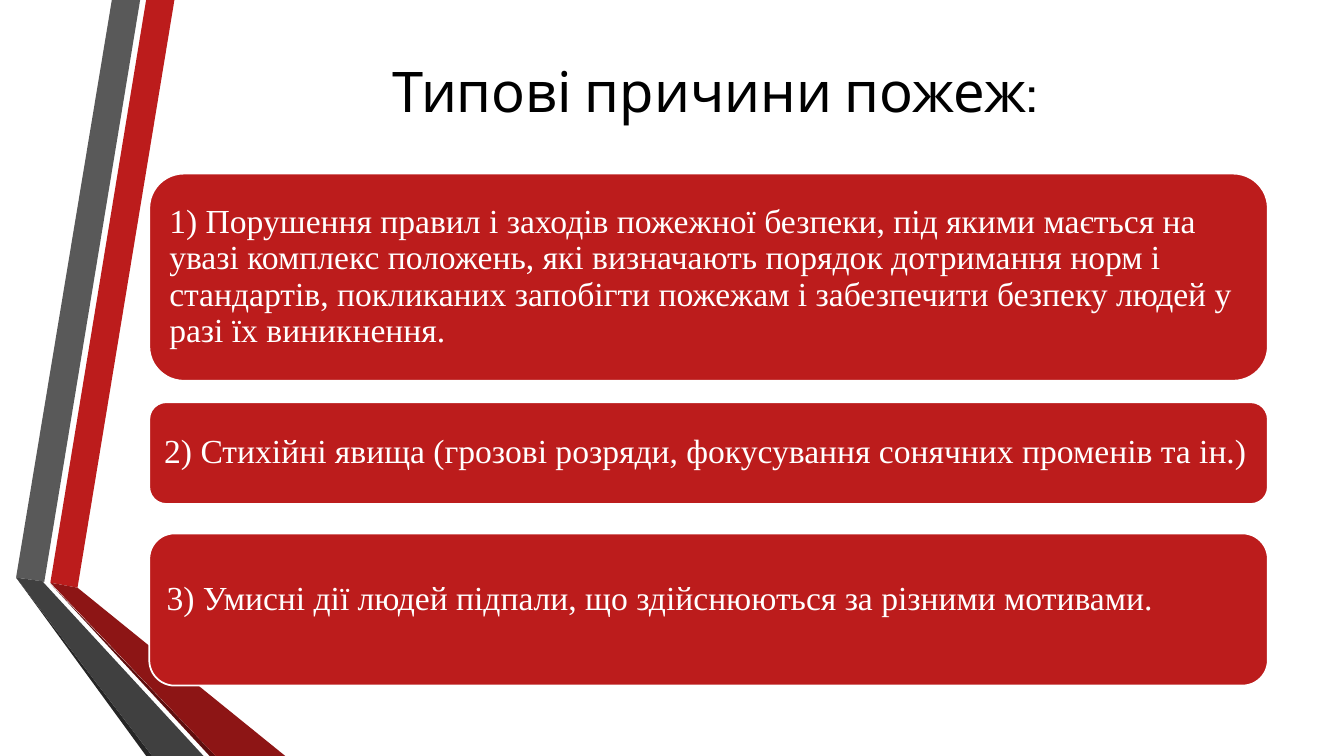
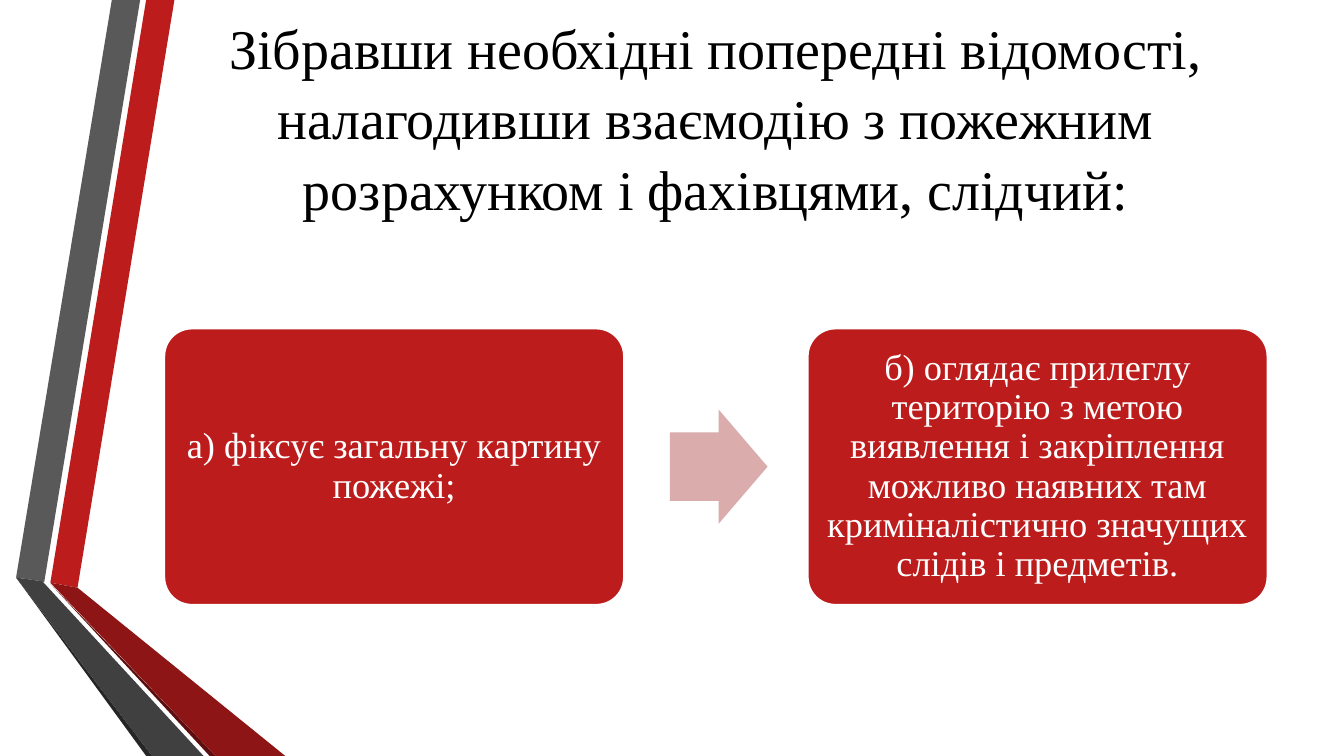
"""Build two slides on the causes of fires and the investigator's first steps."""
import dataclasses

import pptx
import pptx.dml.color
import pptx.enum.shapes
import pptx.enum.text
import pptx.util

Pt = pptx.util.Pt
SHAPES = pptx.enum.shapes.MSO_SHAPE
ALIGN = pptx.enum.text.PP_ALIGN


@dataclasses.dataclass(frozen=True)
class Theme:
    """Colours, fonts and sizes in points."""
    red: str = "BC1C1C"
    deep_red: str = "8D1515"
    darkest_red: str = "5E0E0E"
    pale_red: str = "DAACAC"
    grey: str = "595959"
    dark_grey: str = "404040"
    darkest_grey: str = "262626"
    title_ink: str = "000000"
    card_ink: str = "FFFFFF"
    serif: str = "Times New Roman"
    sans: str = "Cabin"
    title_size: float = 40
    cause_size: float = 24
    step_size: float = 26
    outline: float = 1.25


THEME = Theme()
SLIDE_SIZE = (960, 540)
TITLE_LEFT, TITLE_WIDTH = 116.6, 789

RIBBONS = [
    (THEME.red, [(36, 416.2), (55.4, 419.8), (124.6, 0), (104.4, 0)]),
    (THEME.grey, [(100.1, 0), (79.9, 0), (11.5, 412.6), (31.7, 415.4)]),
    (THEME.darkest_grey, [(11.5, 412.6), (104.4, 540), (108.7, 540)]),
    (THEME.darkest_red, [(36, 416.9), (149.8, 540), (154.1, 540)]),
    (THEME.deep_red, [(36, 416.2), (154.1, 540), (203.8, 540), (55.4, 419.8)]),
    (THEME.dark_grey, [(145.4, 540), (31, 416), (31.7, 415.4), (11.5, 412.6), (108.7, 540)]),
]

CAUSES_TITLE = "Типові причини пожеж:"
CAUSES = [
    ("1) Порушення правил і заходів пожежної безпеки, під якими мається на увазі "
     "комплекс положень, які визначають порядок дотримання норм і стандартів, "
     "покликаних запобігти пожежам і забезпечити безпеку людей у разі їх виникнення.",
     124, 148, 0),
    ("2) Стихійні явища (грозові розряди, фокусування сонячних променів та ін.)",
     287.3, 72.7, 0),
    ("3) Умисні дії людей підпали, що здійснюються за різними мотивами.",
     381, 108.7, 14),
]
CAUSE_LEFT, CAUSE_WIDTH, CAUSE_INSET = 106.6, 799, 7.2

STEPS_TITLE = ("Зібравши необхідні попередні відомості, налагодивши взаємодію "
               "з пожежним розрахунком і фахівцями, слідчий:")
STEPS = [
    "а) фіксує загальну картину пожежі;",
    "б) оглядає прилеглу територію з метою виявлення і закріплення можливо наявних "
    "там криміналістично значущих слідів і предметів.",
]
STEP_LEFT, STEP_TOP, STEP_WIDTH, STEP_HEIGHT = 117.4, 234.7, 328.3, 197.3
STEP_PITCH, STEP_INSET = 1.4 * STEP_WIDTH, 8
ARROW_WIDTH, ARROW_HEIGHT = 69.8, 81.4


def paint(shape, colour, outline=None):
    """Fill a shape flat, with an outline only if one is given."""
    shape.shadow.inherit = False
    shape.fill.solid()
    shape.fill.fore_color.rgb = pptx.dml.color.RGBColor.from_string(colour)
    if outline:
        shape.line.color.rgb = pptx.dml.color.RGBColor.from_string(outline)
        shape.line.width = Pt(THEME.outline)
    else:
        shape.line.fill.background()


def write(frame, text, font, size, colour, align, spacing):
    """Write one paragraph, vertically centred and wrapped."""
    frame.word_wrap = True
    frame.auto_size = pptx.enum.text.MSO_AUTO_SIZE.NONE
    frame.vertical_anchor = pptx.enum.text.MSO_ANCHOR.MIDDLE
    paragraph = frame.paragraphs[0]
    paragraph.alignment = align
    paragraph.line_spacing = spacing
    run = paragraph.add_run()
    run.text = text
    run.font.name = font
    run.font.size = Pt(size)
    run.font.color.rgb = pptx.dml.color.RGBColor.from_string(colour)


def add_titled_slide(deck, text, font, top, height):
    """Add a title-only slide with its title placed."""
    slide = deck.slides.add_slide(deck.slide_layouts[5])
    title = slide.shapes.title
    title.left, title.top = Pt(TITLE_LEFT), Pt(top)
    title.width, title.height = Pt(TITLE_WIDTH), Pt(height)
    write(title.text_frame, text, font, THEME.title_size, THEME.title_ink, ALIGN.CENTER, 1.05)
    return slide


def add_card(slide, text, box, size, align, inset, lift=0):
    """Add a red rounded card; lift is extra space below its text."""
    card = slide.shapes.add_shape(SHAPES.ROUNDED_RECTANGLE, *map(Pt, box))
    paint(card, THEME.red, THEME.card_ink)
    frame = card.text_frame
    frame.margin_left = frame.margin_right = frame.margin_top = Pt(inset)
    frame.margin_bottom = Pt(inset + lift)
    write(frame, text, THEME.serif, size, THEME.card_ink, align, 0.9)
    return card


def add_ribbons(deck, slide):
    """Draw the folded ribbons and move them to the slide master."""
    tree = deck.slide_master.shapes.element
    for order, (colour, corners) in enumerate(RIBBONS):
        start, *rest = [(Pt(x), Pt(y)) for x, y in corners]
        outline = slide.shapes.build_freeform(*start)
        outline.add_line_segments(rest, close=True)
        ribbon = outline.convert_to_shape()
        paint(ribbon, colour)
        ribbon.element.xpath(".//p:cNvPr")[0].set("id", str(100 + order))
        tree.insert(2 + order, ribbon.element)


def add_causes(deck):
    """Add the slide that lists the causes."""
    slide = add_titled_slide(deck, CAUSES_TITLE, THEME.sans, 24.5, 77.8)
    for text, top, height, lift in CAUSES:
        add_card(slide, text, (CAUSE_LEFT, top, CAUSE_WIDTH, height),
                 THEME.cause_size, ALIGN.LEFT, CAUSE_INSET, lift)
    return slide


def add_steps(deck):
    """Add the slide that shows the steps with arrows between them."""
    slide = add_titled_slide(deck, STEPS_TITLE, THEME.serif, 0, 165)
    for order, text in enumerate(STEPS):
        left = STEP_LEFT + order * STEP_PITCH
        if order:
            arrow = slide.shapes.add_shape(
                SHAPES.RIGHT_ARROW,
                Pt(left - 0.3 * STEP_WIDTH), Pt(STEP_TOP + (STEP_HEIGHT - ARROW_HEIGHT) / 2),
                Pt(ARROW_WIDTH), Pt(ARROW_HEIGHT))
            arrow.adjustments[0] = 0.6
            paint(arrow, THEME.pale_red)
        card = add_card(slide, text, (left, STEP_TOP, STEP_WIDTH, STEP_HEIGHT),
                        THEME.step_size, ALIGN.CENTER, STEP_INSET)
        card.adjustments[0] = 0.1


def main():
    """Build and save the deck."""
    deck = pptx.Presentation()
    deck.slide_width, deck.slide_height = map(Pt, SLIDE_SIZE)
    add_ribbons(deck, add_causes(deck))
    add_steps(deck)
    deck.save("out.pptx")


if __name__ == "__main__":
    main()
